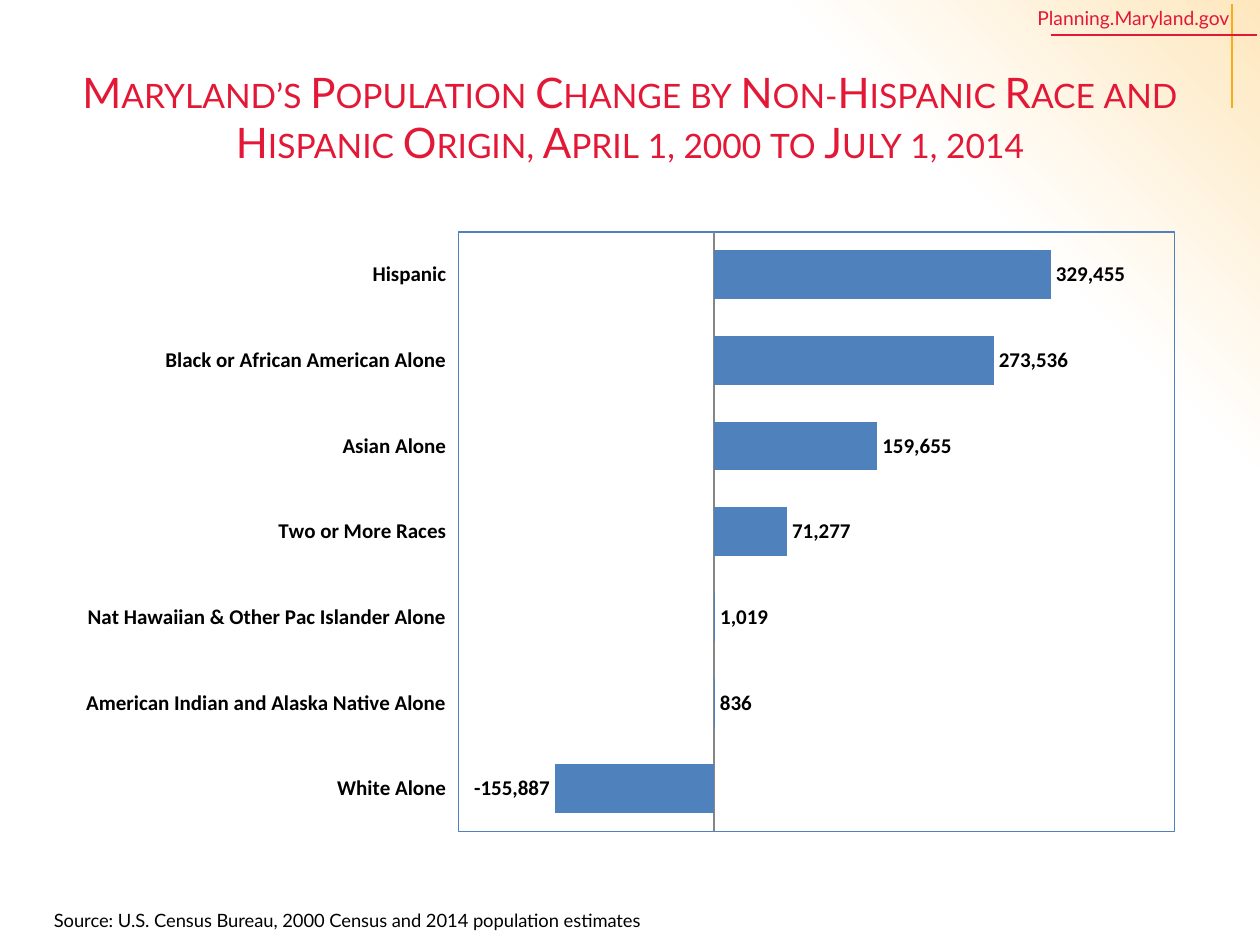
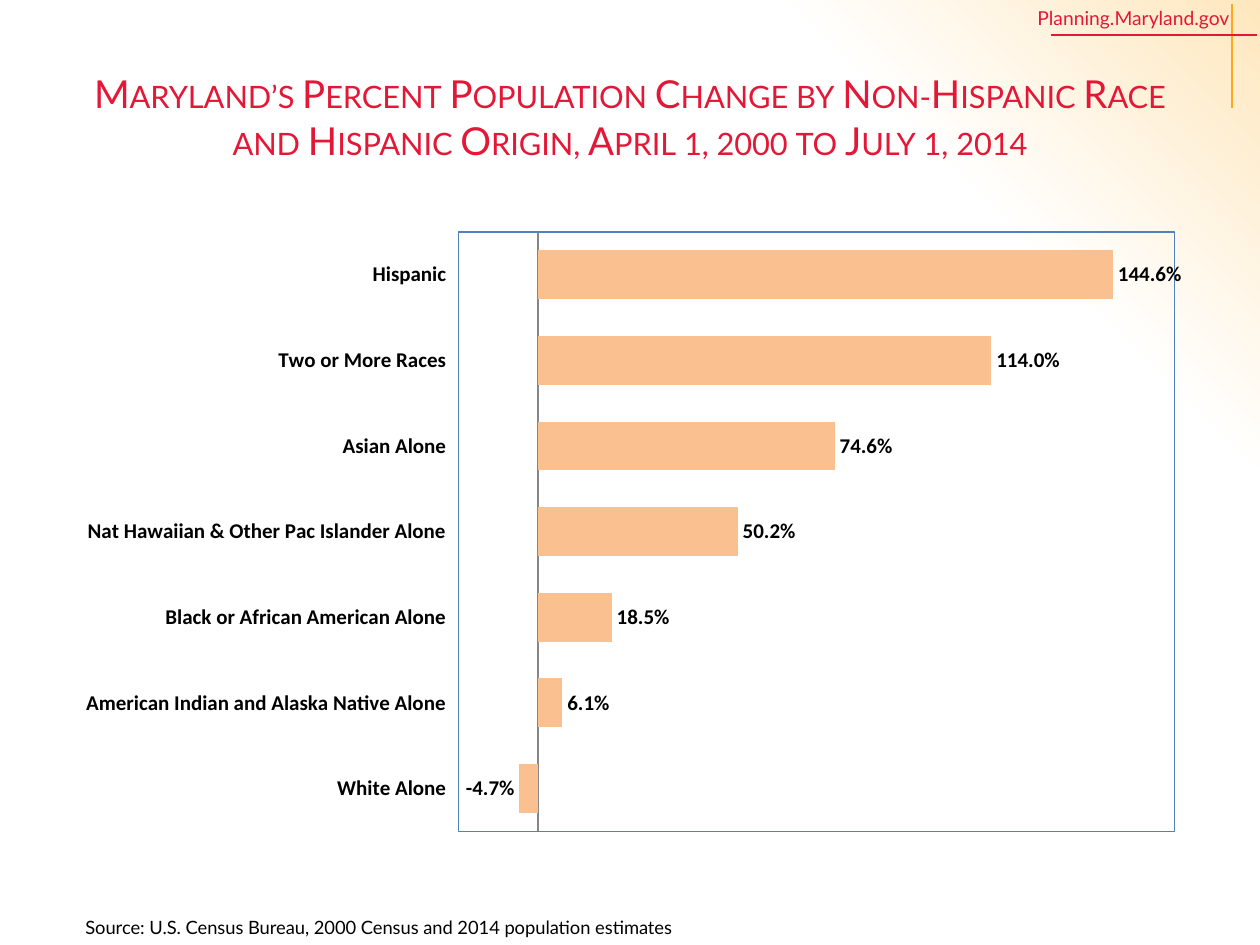
from lxml import etree
from pptx import Presentation, util as u
from pptx.chart.data import CategoryChartData
from pptx.dml.color import RGBColor
from pptx.enum import chart as ch, shapes, text
from pptx.oxml import parse_xml
from pptx.oxml.ns import nsdecls, qn

RED = RGBColor(0xE3, 0x18, 0x37)
GOLD = RGBColor(0xFB, 0xAA, 0x1B)
CREAM = RGBColor(0xFE, 0xE7, 0xBE)
WHITE = RGBColor(0xFF, 0xFF, 0xFF)
BLACK = RGBColor(0, 0, 0)
BLUE = RGBColor(0x4F, 0x81, 0xBD)
ORANGE = RGBColor(0xFA, 0xC0, 0x90)
GRAY = RGBColor(0x86, 0x86, 0x86)

SITE = "Planning.Maryland.gov"
SOURCE = "Source: U.S. Census Bureau, 2000 Census and 2014 population estimates"
WHITE_ALONE = "White Alone"
NATIVE = "American Indian and Alaska Native Alone"
ISLANDER = "Nat Hawaiian & Other Pac Islander Alone"
MULTI = "Two or More Races"
ASIAN = "Asian Alone"
AFRICAN = "Black or African American Alone"
HISPANIC = "Hispanic"

PAGES = [
    {
        "title": "Maryland’s Population Change by Non-Hispanic Race and "
                 "Hispanic Origin, April 1, 2000 to July 1, 2014",
        "title_size": 24,
        "changes": {WHITE_ALONE: -155887, NATIVE: 836, ISLANDER: 1019, MULTI: 71277,
                    ASIAN: 159655, AFRICAN: 273536, HISPANIC: 329455},
        "scale": (-250000, 450000),
        "number_format": "#,##0",
        "bar_color": BLUE,
        "zero_line": 1.25,
        "source_box": (33, 717, 967, 28),
    },
    {
        "title": "Maryland’s Percent Population Change by Non-Hispanic Race and "
                 "Hispanic Origin, April 1, 2000 to July 1, 2014",
        "title_size": 22,
        "changes": {WHITE_ALONE: -0.047, NATIVE: 0.061, AFRICAN: 0.185, ISLANDER: 0.502,
                    ASIAN: 0.746, MULTI: 1.14, HISPANIC: 1.446},
        "scale": (-0.2, 1.6),
        "number_format": "0.0%",
        "bar_color": ORANGE,
        "zero_line": 0.75,
        "source_box": (58, 722, 900, 28),
    },
]

PX = 9144
SLIDE_SIZE = (1000, 750)
SITE_BOX = (734, 5, 242, 19)
TITLE_BOX = (50, 30, 900, 125)
CHART_BOX = (50, 175, 900, 495)
PLOT_BOX = (364, 184, 568, 476)
CORNER_LINES = [((978, 3, 978, 86), GOLD), ((834, 28, 998, 28), RED)]


def emu(*lengths):
    return [u.Emu(length * PX) for length in lengths]


def add_text(slide, box, words, size, color, align=text.PP_ALIGN.LEFT):
    frame = slide.shapes.add_textbox(*emu(*box)).text_frame
    frame.word_wrap = True
    frame.text = words
    paragraph = frame.paragraphs[0]
    paragraph.alignment = align
    font = paragraph.runs[0].font
    font.name, font.size, font.color.rgb = "Lato", u.Pt(size), color
    return frame


def add_backdrop(slide):
    fill = slide.background.fill
    fill.gradient()
    fill.gradient_angle = 225
    for stop, color, position in zip(fill.gradient_stops, (CREAM, WHITE), (0, 0.22)):
        stop.color.rgb, stop.position = color, position
    cream = next(slide.element.iter(qn("a:srgbClr")))
    etree.SubElement(cream, qn("a:alpha")).set("val", "50000")


def add_corner(slide):
    for ends, color in CORNER_LINES:
        line = slide.shapes.add_connector(shapes.MSO_CONNECTOR.STRAIGHT, *emu(*ends))
        line.line.color.rgb, line.line.width = color, u.Pt(1)
        etree.SubElement(line.element.spPr, qn("a:effectLst"))
    frame = add_text(slide, SITE_BOX, SITE, 11, RED, text.PP_ALIGN.RIGHT)
    frame.margin_top = frame.margin_right = frame.margin_bottom = 0


def add_title(slide, page):
    frame = add_text(slide, TITLE_BOX, page["title"], page["title_size"], RED,
                     text.PP_ALIGN.CENTER)
    frame.vertical_anchor = text.MSO_ANCHOR.MIDDLE
    frame.paragraphs[0].runs[0].font._element.set("cap", "small")


def frame_plot(chart):
    left, top, width, height = CHART_BOX
    x, y, w, h = PLOT_BOX
    fractions = {"x": (x - left) / width, "y": (y - top) / height,
                 "w": w / width, "h": h / height}
    sizes = "".join(f'<c:{key} val="{value:.4f}"/>' for key, value in fractions.items())
    plot_area = chart.element.find(".//" + qn("c:plotArea"))
    for layout in plot_area.findall(qn("c:layout")):
        plot_area.remove(layout)
    plot_area.insert(0, parse_xml(
        f'<c:layout {nsdecls("c")}><c:manualLayout><c:layoutTarget val="inner"/>'
        f'<c:xMode val="edge"/><c:yMode val="edge"/>{sizes}</c:manualLayout></c:layout>'))
    plot_area.append(parse_xml(
        f'<c:spPr {nsdecls("c", "a")}><a:noFill/><a:ln w="9525"><a:solidFill>'
        f'<a:srgbClr val="{BLUE}"/></a:solidFill></a:ln></c:spPr>'))


def add_changes(slide, page):
    data = CategoryChartData(number_format=page["number_format"])
    data.categories = list(page["changes"])
    data.add_series("Series 1", list(page["changes"].values()))
    chart = slide.shapes.add_chart(
        ch.XL_CHART_TYPE.BAR_CLUSTERED, *emu(*CHART_BOX), data).chart
    chart.has_legend = chart.has_title = False
    chart.font.name, chart.font.size = "Calibri", u.Pt(10)
    chart.font.color.rgb = BLACK

    groups, amounts = chart.category_axis, chart.value_axis
    groups.tick_label_position = ch.XL_TICK_LABEL_POSITION.LOW
    groups.major_tick_mark = groups.minor_tick_mark = ch.XL_TICK_MARK.NONE
    groups.format.line.color.rgb = GRAY
    groups.format.line.width = u.Pt(page["zero_line"])
    amounts.minimum_scale, amounts.maximum_scale = page["scale"]
    amounts.has_major_gridlines = amounts.visible = False

    plot = chart.plots[0]
    plot.gap_width, plot.overlap, plot.vary_by_categories = 75, -25, False
    bars = plot.series[0]
    bars.invert_if_negative = False
    bars.format.fill.solid()
    bars.format.fill.fore_color.rgb = page["bar_color"]
    labels = bars.data_labels
    labels.show_value = True
    labels.number_format, labels.number_format_is_linked = page["number_format"], False
    labels.position = ch.XL_LABEL_POSITION.OUTSIDE_END
    for font in (groups.tick_labels.font, labels.font):
        font.size, font.bold = u.Pt(12), True
        font.name, font.color.rgb = "Calibri", BLACK
    frame_plot(chart)


def main():
    prs = Presentation()
    prs.slide_width, prs.slide_height = emu(*SLIDE_SIZE)
    for page in PAGES:
        slide = prs.slides.add_slide(prs.slide_layouts[6])
        add_backdrop(slide)
        add_corner(slide)
        add_title(slide, page)
        add_changes(slide, page)
        add_text(slide, page["source_box"], SOURCE, 10.5, BLACK)
    prs.save("out.pptx")


if __name__ == "__main__":
    main()
